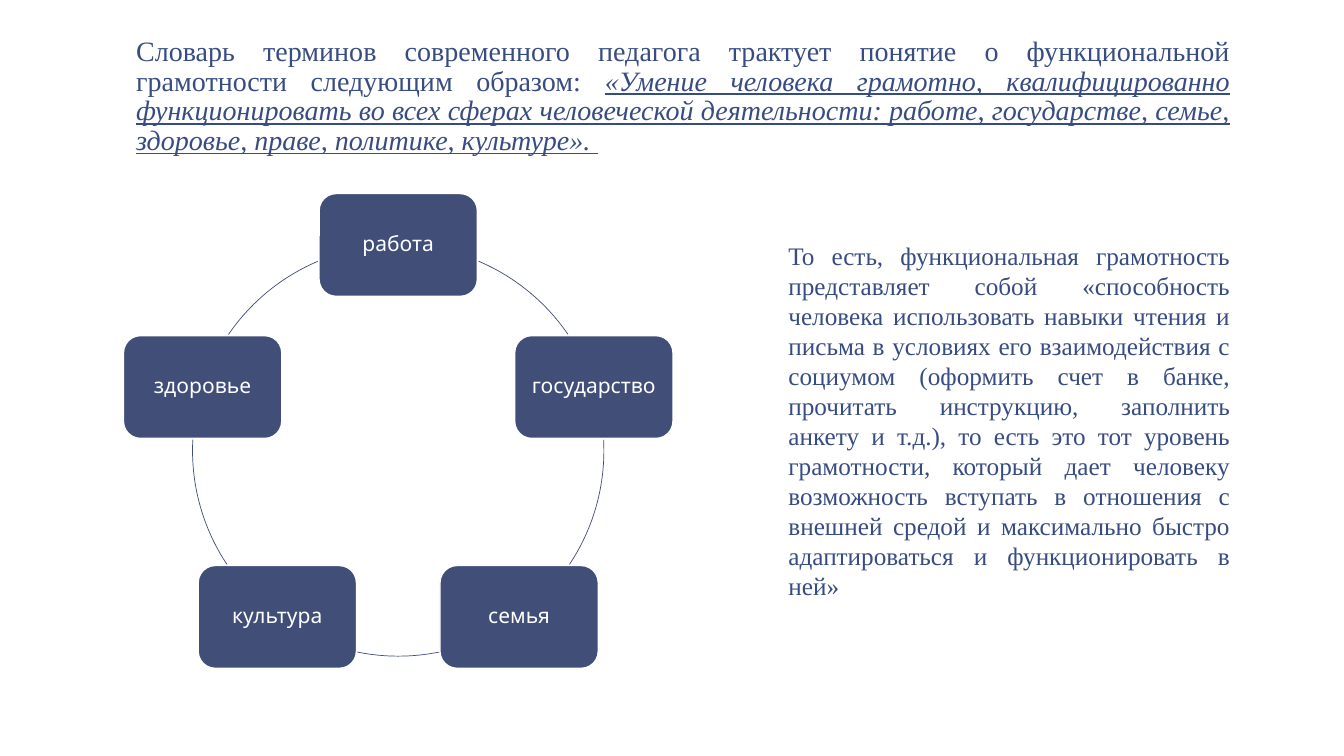
from math import cos, radians, sin

from pptx import Presentation
from pptx import util as u
from pptx.dml.color import RGBColor
from pptx.enum import shapes, text


def tint(code):
    """Turn a hex string into a colour."""
    return RGBColor.from_string(code)


class Deck:
    """Hold the slide and its style."""

    serif, sans = "Times New Roman", "League Spartan"
    ink, navy, white = "374C81", "414E77", "FFFFFF"

    def __init__(self):
        """Open a deck with one blank slide."""
        self.prs = Presentation()
        self.prs.slide_width = u.Inches(13.33)
        self.prs.slide_height = u.Inches(7.5)
        self.slide = self.prs.slides.add_slide(self.prs.slide_layouts[6])

    def place(self, box):
        """Convert a box to lengths."""
        return [u.Inches(n) for n in box]

    def frame(self, shape, side, edge, anchor):
        """Set wrapping, insets and anchor of a text frame."""
        tf = shape.text_frame
        tf.word_wrap = True
        tf.margin_left = tf.margin_right = u.Inches(side)
        tf.margin_top = tf.margin_bottom = u.Inches(edge)
        tf.vertical_anchor = anchor
        return tf

    def style(self, font, name, size, color):
        """Set face, size and colour of a font."""
        font.name, font.size = name, u.Pt(size)
        font.color.rgb = tint(color)

    def prose(self, box, parts, size, gap, anchor):
        """Add a justified paragraph; every part after the first is stressed."""
        shape = self.slide.shapes.add_textbox(*self.place(box))
        para = self.frame(shape, 0.13, 0.07, anchor).paragraphs[0]
        para.alignment = text.PP_ALIGN.JUSTIFY
        para.line_spacing = gap
        for i, part in enumerate(parts):
            run = para.add_run()
            run.text = part
            self.style(run.font, self.serif, size, self.ink)
            if i:
                run.font.italic = run.font.underline = True

    def node(self, x, y, label):
        """Add a rounded box centred on a point."""
        wide, high = 1.57, 1.02
        box = self.place((x - wide / 2, y - high / 2, wide, high))
        shape = self.slide.shapes.add_shape(
            shapes.MSO_SHAPE.ROUNDED_RECTANGLE, *box)
        shape.shadow.inherit = False
        shape.fill.solid()
        shape.fill.fore_color.rgb = tint(self.navy)
        shape.line.color.rgb = tint(self.white)
        shape.line.width = u.Pt(1)
        tf = self.frame(shape, 0.11, 0.11, text.MSO_ANCHOR.MIDDLE)
        tf.text = label
        para = tf.paragraphs[0]
        para.alignment = text.PP_ALIGN.CENTER
        para.line_spacing = 0.9
        self.style(para.runs[0].font, self.sans, 15, self.white)

    def arc(self, x, y, rad, start, end):
        """Add an arc; angles run clockwise from the top."""
        box = self.place((x - rad, y - rad, 2 * rad, 2 * rad))
        shape = self.slide.shapes.add_shape(shapes.MSO_SHAPE.ARC, *box)
        shape.shadow.inherit = False
        shape.fill.background()
        shape.line.color.rgb = tint(self.navy)
        shape.line.width = u.Pt(0.5)
        for i, turn in enumerate((start, end)):
            shape.adjustments[i] = (turn - 90) % 360 * 0.6

    def ring(self, x, y, rad, labels, arcs):
        """Add evenly spaced nodes joined by arcs."""
        for i, (label, ends) in enumerate(zip(labels, arcs)):
            turn = radians(360 / len(labels) * i)
            self.node(x + rad * sin(turn), y - rad * cos(turn), label)
            self.arc(x, y, rad, *ends)


def main():
    """Build the slide."""
    deck = Deck()
    deck.prose(
        (1.22, 0.08, 11.11, 1.54),
        ["Словарь терминов современного педагога трактует понятие "
         "о функциональной грамотности следующим образом: ",
         "«Умение человека грамотно, квалифицированно функционировать во "
         "всех сферах человеческой деятельности: работе, государстве, "
         "семье, здоровье, праве, политике, культуре». "],
        20, 0.88, text.MSO_ANCHOR.BOTTOM)
    half = [(23, 55.6), (87, 123.6)]
    back = [(360 - b, 360 - a) for a, b in reversed(half)]
    deck.ring(
        3.95, 4.47, 2.04,
        ["работа", "государство", "семья", "культура", "здоровье"],
        half + [(168.5, 191.5)] + back)
    deck.prose(
        (7.69, 2.33, 4.64, 4.42),
        ["То есть, функциональная грамотность представляет собой "
         "«способность человека использовать навыки чтения и письма в "
         "условиях его взаимодействия с социумом (оформить счет в банке, "
         "прочитать инструкцию, заполнить анкету и т.д.), то есть это тот "
         "уровень грамотности, который дает человеку возможность вступать "
         "в отношения с внешней средой и максимально быстро "
         "адаптироваться и функционировать в ней»"],
        18, 0.99, text.MSO_ANCHOR.TOP)
    deck.prs.save("out.pptx")


if __name__ == "__main__":
    main()
